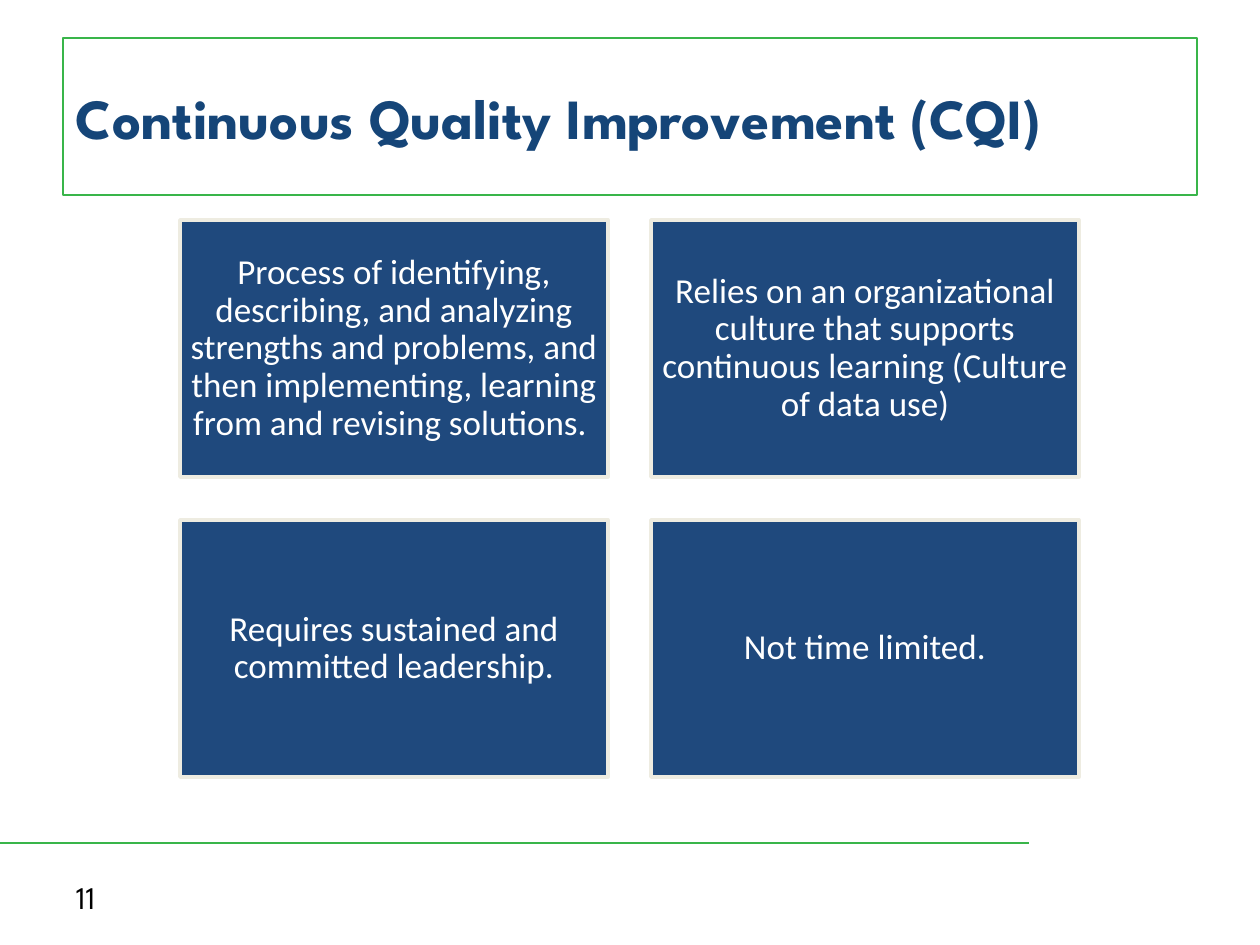
import dataclasses

import pptx
import pptx.dml.color
import pptx.enum.shapes
import pptx.enum.text
import pptx.oxml.ns
import pptx.util
from lxml import etree

PX_PER_INCH = 126
ALIGN = pptx.enum.text.PP_ALIGN


@dataclasses.dataclass(frozen=True)
class Theme:
    green: str = "39B54A"
    title_blue: str = "154578"
    card_blue: str = "1F497D"
    card_edge: str = "EEECE1"
    white: str = "FFFFFF"
    black: str = "000000"
    heading_font: str = "League Spartan"
    body_font: str = "Calibri"
    title_size: float = 32.4
    card_size: float = 20
    number_size: float = 18


def px(length):
    return pptx.util.Emu(round(length * pptx.util.Inches(1) / PX_PER_INCH))


def rgb(code):
    return pptx.dml.color.RGBColor.from_string(code)


def write_text(frame, text, *, font, size, color, bold=False,
               align=ALIGN.LEFT, spacing=1.0, side=13, edge=6):
    frame.word_wrap = True
    frame.vertical_anchor = pptx.enum.text.MSO_ANCHOR.MIDDLE
    frame.margin_left = frame.margin_right = px(side)
    frame.margin_top = frame.margin_bottom = px(edge)
    paragraph = frame.paragraphs[0]
    paragraph.alignment = align
    paragraph.line_spacing = spacing
    run = paragraph.add_run()
    run.text = text
    run.font.name = font
    run.font.size = pptx.util.Pt(size)
    run.font.bold = bold
    run.font.color.rgb = rgb(color)


class SlideBuilder:
    def __init__(self, slide, theme):
        self.slide = slide
        self.theme = theme

    def box(self, left, top, width, height, line, weight, fill=None):
        panel = self.slide.shapes.add_shape(
            pptx.enum.shapes.MSO_SHAPE.RECTANGLE,
            px(left), px(top), px(width), px(height))
        panel.shadow.inherit = False
        if fill:
            panel.fill.solid()
            panel.fill.fore_color.rgb = rgb(fill)
        else:
            panel.fill.background()
        panel.line.color.rgb = rgb(line)
        panel.line.width = pptx.util.Pt(weight)
        return panel.text_frame

    def title(self, text, left, top, width, height):
        theme = self.theme
        frame = self.box(left, top, width, height, theme.green, 1)
        write_text(frame, text, font=theme.heading_font, size=theme.title_size,
                   color=theme.title_blue, bold=True)

    def card(self, text, left, top, width, height):
        theme = self.theme
        frame = self.box(left, top, width, height, theme.card_edge, 2, theme.card_blue)
        write_text(frame, text, font=theme.body_font, size=theme.card_size,
                   color=theme.white, align=ALIGN.CENTER, spacing=0.9,
                   side=10, edge=10)

    def rule(self, left, right, y):
        footer_rule = self.slide.shapes.add_connector(
            pptx.enum.shapes.MSO_CONNECTOR.STRAIGHT, px(left), px(y), px(right), px(y))
        footer_rule.line.color.rgb = rgb(self.theme.green)
        footer_rule.line.width = pptx.util.Pt(1.5)
        etree.SubElement(footer_rule._element.spPr, pptx.oxml.ns.qn("a:effectLst"))

    def page_number(self, text, left, top, width, height):
        theme = self.theme
        number = self.slide.shapes.add_textbox(px(left), px(top), px(width), px(height))
        write_text(number.text_frame, text, font=theme.heading_font,
                   size=theme.number_size, color=theme.black)


def main():
    deck = pptx.Presentation()
    deck.slide_width, deck.slide_height = px(1260), px(945)
    builder = SlideBuilder(deck.slides.add_slide(deck.slide_layouts[6]), Theme())

    builder.rule(0, 1029, 843)
    builder.page_number("11", 63, 872, 294, 50)
    builder.title("Continuous Quality Improvement (CQI)", 63, 38, 1134, 157)

    principles = [
        "Process of identifying, describing, and analyzing strengths and problems, "
        "and then implementing, learning from and revising solutions. ",
        "Relies on an organizational culture that supports continuous learning "
        "(Culture of data use)",
        "Requires sustained and committed leadership.",
        "Not time limited.",
    ]
    card_width, card_height, gap = 428, 257, 43
    for index, principle in enumerate(principles):
        row, column = divmod(index, 2)
        builder.card(principle, 180 + column * (card_width + gap),
                     220 + row * (card_height + gap), card_width, card_height)

    deck.save("out.pptx")


if __name__ == "__main__":
    main()
